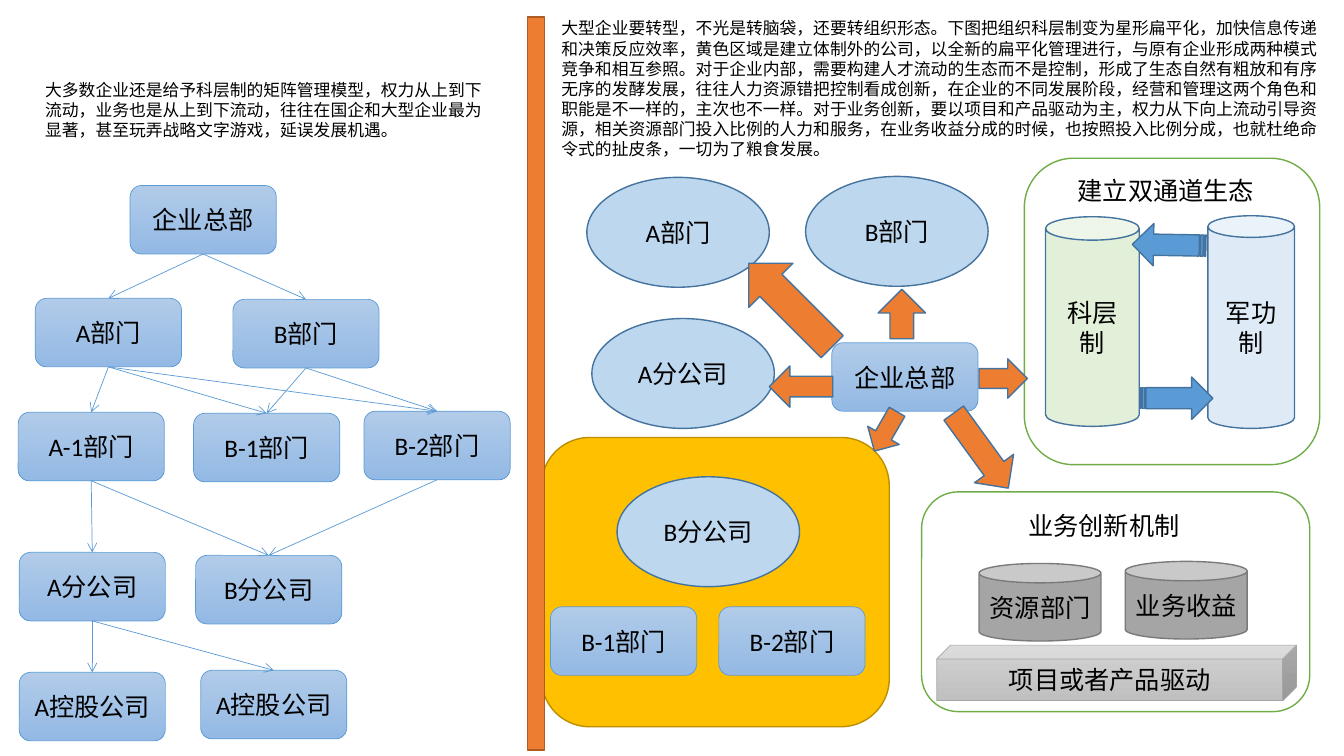
"""Build a slide contrasting a hierarchical company with a flat, star-shaped one."""
from dataclasses import dataclass

from lxml.etree import SubElement
from pptx import Presentation
from pptx.dml.color import RGBColor
from pptx.enum.shapes import MSO_CONNECTOR, MSO_SHAPE
from pptx.enum.text import MSO_ANCHOR, MSO_AUTO_SIZE, PP_ALIGN
from pptx.oxml.ns import qn
from pptx.shapes.autoshape import Shape
from pptx.slide import Slide
from pptx.text.text import TextFrame
from pptx.util import Emu, Pt

PX = 9144
FONT = "Calibri"
BLACK = RGBColor(0x00, 0x00, 0x00)
WHITE = RGBColor(0xFF, 0xFF, 0xFF)
BLUE = RGBColor(0x5B, 0x9B, 0xD5)
DARK_BLUE = RGBColor(0x43, 0x73, 0x9E)
LIGHT_BLUE = RGBColor(0xBD, 0xD7, 0xEE)
PALE_BLUE = RGBColor(0xDE, 0xEB, 0xF7)
GREEN = RGBColor(0x70, 0xAD, 0x47)
PALE_GREEN = RGBColor(0xE2, 0xF0, 0xD9)
ORANGE = RGBColor(0xED, 0x7D, 0x31)
DARK_ORANGE = RGBColor(0xAF, 0x5C, 0x24)
GOLD = RGBColor(0xFF, 0xC0, 0x00)
DARK_GOLD = RGBColor(0xBD, 0x8E, 0x00)
GREY = RGBColor(0xA5, 0xA5, 0xA5)
DARK_GREY = RGBColor(0x7A, 0x7A, 0x7A)
BLUE_GRADIENT = (RGBColor(0xB1, 0xCB, 0xE9), RGBColor(0x93, 0xB9, 0xE4))
GREY_GRADIENT = (RGBColor(0xD2, 0xD2, 0xD2), RGBColor(0xC0, 0xC0, 0xC0))


@dataclass(frozen=True)
class Style:
    """Fill (one colour or a top-to-bottom pair) and outline."""
    fill: RGBColor | tuple[RGBColor, RGBColor]
    line: RGBColor
    width: float = 1


@dataclass(frozen=True)
class Item:
    """A preset shape with its place in px, style, label and rotation."""
    kind: MSO_SHAPE
    x: int
    y: int
    w: int
    h: int
    style: Style
    text: str = ""
    rot: int = 0


@dataclass(frozen=True)
class Note:
    """A text box with its place in px and font size."""
    x: int
    y: int
    w: int
    h: int
    text: str
    size: int = 18


UNIT = Style(BLUE_GRADIENT, BLUE, 0.5)
BRANCH = Style(LIGHT_BLUE, DARK_BLUE)
FLOW = Style(ORANGE, DARK_BLUE)
EXCHANGE = Style(BLUE, DARK_BLUE)
PANEL = Style(WHITE, GREEN)
STORE = Style(GREY, DARK_GREY)


def unit(x: int, y: int, text: str) -> Item:
    """Describe a rounded box for an organisation unit."""
    return Item(MSO_SHAPE.ROUNDED_RECTANGLE, x, y, 145, 68, UNIT, text)


def branch(x: int, y: int, text: str) -> Item:
    """Describe an ellipse for an autonomous branch."""
    return Item(MSO_SHAPE.OVAL, x, y, 181, 109, BRANCH, text)


GOLD_AREA = Item(MSO_SHAPE.ROUNDED_RECTANGLE, 537, 434, 345, 287, Style(GOLD, DARK_GOLD))

HIERARCHY = {
    "hq": unit(129, 184, "企业总部"),
    "a": unit(35, 296, "A部门"),
    "b": unit(231, 297, "B部门"),
    "a1": unit(18, 409, "A-1部门"),
    "b1": unit(192, 410, "B-1部门"),
    "b2": unit(361, 408, "B-2部门"),
    "a_branch": unit(19, 548, "A分公司"),
    "b_branch": unit(194, 551, "B分公司"),
    "holding_1": unit(19, 667, "A控股公司"),
    "holding_2": unit(199, 665, "A控股公司"),
}

LINKS = {
    "hq": ("a", "b"),
    "a": ("a1", "b1", "b2"),
    "b": ("b1", "b2"),
    "a1": ("a_branch", "b_branch"),
    "b2": ("b_branch",),
    "a_branch": ("holding_1", "holding_2"),
}

STAR = [
    Item(MSO_SHAPE.RECTANGLE, 523, 17, 17, 727, Style(ORANGE, DARK_ORANGE)),
    branch(587, 316, "A分公司"),
    branch(612, 473, "B分公司"),
    unit(546, 602, "B-1部门"),
    unit(713, 602, "B-2部门"),
    branch(582, 176, "A部门"),
    branch(799, 175, "B部门"),
    unit(825, 340, "企业总部"),
    Item(MSO_SHAPE.UP_ARROW, 871, 287, 47, 49, FLOW),
    Item(MSO_SHAPE.UP_ARROW, 753, 244, 62, 117, FLOW, rot=315),
    Item(MSO_SHAPE.LEFT_ARROW, 763, 363, 63, 41, FLOW),
    Item(MSO_SHAPE.ROUNDED_RECTANGLE, 1016, 157, 293, 304, PANEL),
    Item(MSO_SHAPE.CAN, 1037, 215, 93, 208, Style(PALE_GREEN, DARK_BLUE), "科层制"),
    Item(MSO_SHAPE.CAN, 1198, 214, 86, 211, Style(PALE_BLUE, DARK_BLUE), "军功制"),
    Item(MSO_SHAPE.STRIPED_RIGHT_ARROW, 1130, 374, 73, 42, EXCHANGE),
    Item(MSO_SHAPE.STRIPED_RIGHT_ARROW, 1123, 222, 73, 42, EXCHANGE, rot=181),
    Item(MSO_SHAPE.RIGHT_ARROW, 971, 356, 48, 39, FLOW),
    Item(MSO_SHAPE.ROUNDED_RECTANGLE, 914, 488, 385, 218, PANEL),
    Item(MSO_SHAPE.LEFT_ARROW, 856, 410, 45, 36, FLOW, rot=300),
    Item(MSO_SHAPE.CUBE, 929, 640, 357, 55, Style(GREY_GRADIENT, GREY, 0.5), "项目或者产品驱动"),
    Item(MSO_SHAPE.CAN, 971, 559, 121, 77, STORE, "资源部门"),
    Item(MSO_SHAPE.CAN, 1116, 557, 121, 77, STORE, "业务收益"),
    Item(MSO_SHAPE.DOWN_ARROW, 949, 401, 48, 92, FLOW, rot=324),
]

NOTES = [
    Note(1059, 169, 215, 42, "建立双通道生态"),
    Note(1010, 501, 178, 42, "业务创新机制"),
    Note(35, 74, 467, 71, "大多数企业还是给予科层制的矩阵管理模型，权力从上到下流动，业务也是从上到下流动，"
         "往往在国企和大型企业最为显著，甚至玩弄战略文字游戏，延误发展机遇。", 12),
    Note(547, 13, 778, 151, "大型企业要转型，不光是转脑袋，还要转组织形态。下图把组织科层制变为星形扁平化，"
         "加快信息传递和决策反应效率，黄色区域是建立体制外的公司，以全新的扁平化管理进行，"
         "与原有企业形成两种模式竞争和相互参照。对于企业内部，需要构建人才流动的生态而不是控制，"
         "形成了生态自然有粗放和有序无序的发酵发展，往往人力资源错把控制看成创新，"
         "在企业的不同发展阶段，经营和管理这两个角色和职能是不一样的，主次也不一样。"
         "对于业务创新，要以项目和产品驱动为主，权力从下向上流动引导资源，"
         "相关资源部门投入比例的人力和服务，在业务收益分成的时候，也按照投入比例分成，"
         "也就杜绝命令式的扯皮条，一切为了粮食发展。", 12),
]


def write(tf: TextFrame, text: str, size: int, align: PP_ALIGN) -> None:
    """Put one formatted paragraph into a text frame."""
    tf.word_wrap = True
    tf.text = text
    p = tf.paragraphs[0]
    p.alignment = align
    for r in p.runs:
        r.font.name = FONT
        r.font.size = Pt(size)
        r.font.color.rgb = BLACK


def draw_item(s: Slide, item: Item) -> Shape:
    """Draw a preset shape with its label."""
    sp = s.shapes.add_shape(item.kind, *(Emu(n * PX) for n in (item.x, item.y, item.w, item.h)))
    sp.shadow.inherit = False
    sp.rotation = item.rot
    if isinstance(item.style.fill, RGBColor):
        sp.fill.solid()
        sp.fill.fore_color.rgb = item.style.fill
    else:
        sp.fill.gradient()
        sp.fill.gradient_angle = 270
        for stop, colour in zip(sp.fill.gradient_stops, item.style.fill):
            stop.color.rgb = colour
    sp.line.color.rgb = item.style.line
    sp.line.width = Pt(item.style.width)
    if item.text:
        sp.text_frame.vertical_anchor = MSO_ANCHOR.MIDDLE
        write(sp.text_frame, item.text, 18, PP_ALIGN.CENTER)
    return sp


def draw_link(s: Slide, parent: Shape, child: Shape) -> None:
    """Connect the bottom of a parent to the top of a child with an arrow."""
    cx = s.shapes.add_connector(MSO_CONNECTOR.STRAIGHT, 0, 0, 0, 0)
    cx.begin_connect(parent, 2)
    cx.end_connect(child, 0)
    cx.line.color.rgb = BLUE
    cx.line.width = Pt(0.5)
    sp_pr = cx._element.spPr
    SubElement(sp_pr.find(qn("a:ln")), qn("a:tailEnd"), type="arrow")
    SubElement(sp_pr, qn("a:effectLst"))


def draw_note(s: Slide, note: Note) -> None:
    """Draw a left-aligned text box."""
    sp = s.shapes.add_textbox(*(Emu(n * PX) for n in (note.x, note.y, note.w, note.h)))
    write(sp.text_frame, note.text, note.size, PP_ALIGN.LEFT)
    sp.text_frame.auto_size = MSO_AUTO_SIZE.SHAPE_TO_FIT_TEXT


def main() -> None:
    """Build and save the slide."""
    prs = Presentation()
    prs.slide_width, prs.slide_height = Emu(1333 * PX), Emu(750 * PX)
    s = prs.slides.add_slide(prs.slide_layouts[6])
    draw_item(s, GOLD_AREA)
    units = {key: draw_item(s, item) for key, item in HIERARCHY.items()}
    for parent, children in LINKS.items():
        for child in children:
            draw_link(s, units[parent], units[child])
    for item in STAR:
        draw_item(s, item)
    for note in NOTES:
        draw_note(s, note)
    prs.save("out.pptx")


if __name__ == "__main__":
    main()
